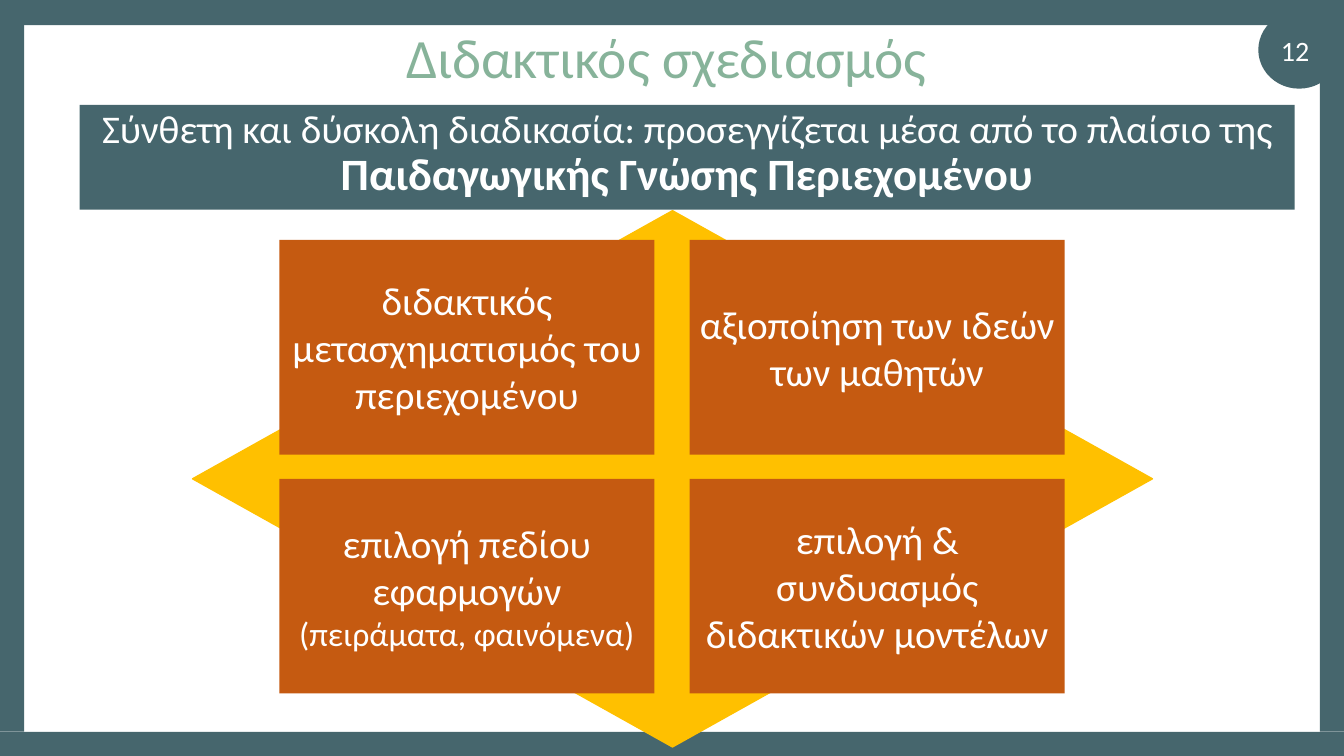
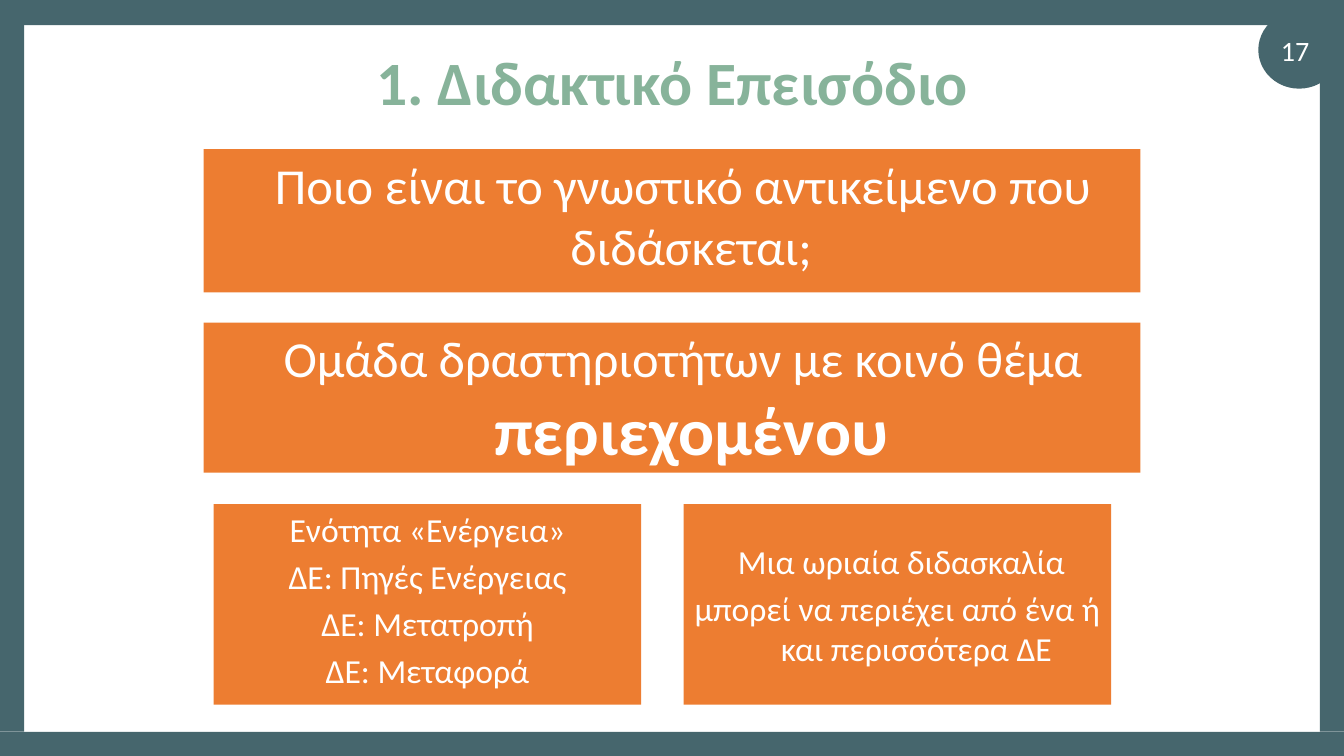
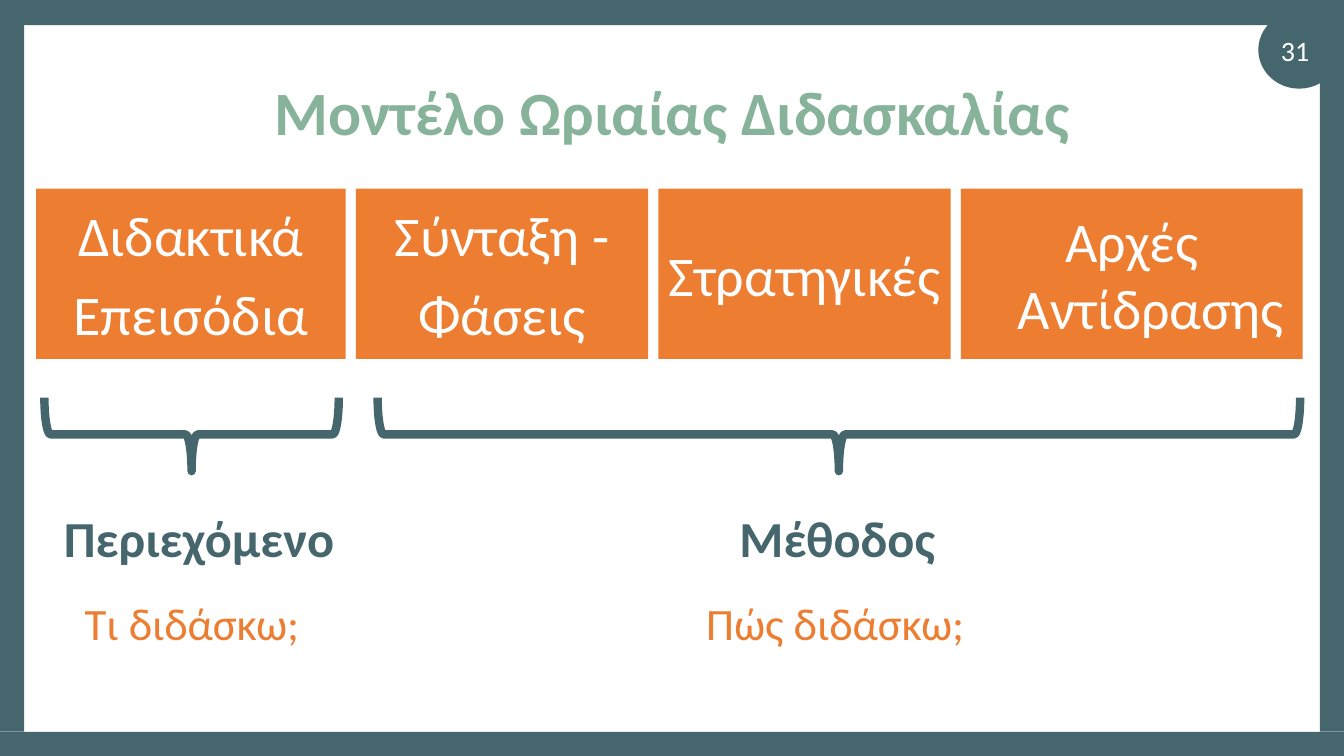
from dataclasses import dataclass
from itertools import product

from pptx import Presentation
from pptx.dml.color import RGBColor
from pptx.enum.shapes import MSO_SHAPE as Shape
from pptx.enum.text import MSO_ANCHOR as Anchor, PP_ALIGN as Align
from pptx.util import Inches, Pt

TEAL = RGBColor(0x46, 0x66, 0x6D)
SAGE = RGBColor(0x87, 0xB3, 0x9A)
WHITE = RGBColor(0xFF, 0xFF, 0xFF)
GOLD = RGBColor(0xFF, 0xC0, 0x00)
RUST = RGBColor(0xC5, 0x5A, 0x11)
ORANGE = RGBColor(0xED, 0x7D, 0x31)

FONT = "Calibri"
WIDTH, HEIGHT = 13.33, 7.5
HANG = 0.38  # hanging indent of the content paragraphs


@dataclass(frozen=True)
class Run:
    text: str
    size: float
    bold: bool = False
    color: RGBColor = WHITE


@dataclass(frozen=True)
class Para:
    runs: tuple[Run, ...]
    left: float = 0
    first: float = 0
    line: float = 1.0


@dataclass(frozen=True)
class Box:
    left: float
    top: float
    width: float
    height: float


def plain(text: str, size: float) -> Para:
    return Para((Run(text, size),))


def hanging(*runs: Run, first: float = -HANG) -> Para:
    return Para(runs, left=HANG, first=first)


def write(sp, paras: list[Para], anchor=Anchor.MIDDLE) -> None:
    tf = sp.text_frame
    frame = {"word_wrap": True, "vertical_anchor": anchor,
             "margin_left": Inches(0.08), "margin_right": Inches(0.08)}
    for name, value in frame.items():
        setattr(tf, name, value)
    for i, para in enumerate(paras):
        p = tf.add_paragraph() if i else tf.paragraphs[0]
        p.alignment, p.line_spacing = Align.CENTER, para.line
        if para.left:
            # Space before is a fifth of the text size
            p.space_before = Pt(0.2 * para.runs[0].size if i else 0)
            pPr = p._p.get_or_add_pPr()
            pPr.set("marL", str(Inches(para.left)))
            pPr.set("indent", str(Inches(para.first)))
        for run in para.runs:
            r = p.add_run()
            r.text = run.text
            style = {"name": FONT, "size": Pt(run.size), "bold": run.bold}
            for name, value in style.items():
                setattr(r.font, name, value)
            r.font.color.rgb = run.color


def place(box: Box) -> tuple:
    return tuple(Inches(v) for v in (box.left, box.top, box.width, box.height))


def add_block(s, box: Box, fill: RGBColor, kind=Shape.RECTANGLE):
    sp = s.shapes.add_shape(kind, *place(box))
    sp.shadow.inherit = False
    sp.fill.solid()
    sp.fill.fore_color.rgb = fill
    sp.line.fill.background()
    return sp


def add_text(s, box: Box, *paras: Para) -> None:
    write(s.shapes.add_textbox(*place(box)), list(paras))


def add_panel(s, box: Box, fill: RGBColor, *paras: Para, anchor=Anchor.MIDDLE) -> None:
    write(add_block(s, box, fill), list(paras), anchor)


def add_brace(s, center: float, span: float) -> None:
    depth, middle = 0.73, 4.31
    box = Box(center - depth / 2, middle - span / 2, depth, span)
    sp = s.shapes.add_shape(Shape.RIGHT_BRACE, *place(box))
    sp.shadow.inherit = False
    sp.rotation = 90
    sp.fill.background()
    sp.line.color.rgb, sp.line.width = TEAL, Pt(6)


def new_slide(prs, number: int, title: Run, title_box: Box):
    """Blank slide with the frame, the number badge and the title."""
    s = prs.slides.add_slide(prs.slide_layouts[6])
    add_block(s, Box(12.48, 0.11, 0.81, 0.77), TEAL, Shape.OVAL)
    for band in (Box(0, 0, WIDTH, 0.25), Box(0, 7.26, WIDTH, 0.24),
                 Box(0, 0, 0.24, 7.26), Box(13.09, 0, 0.24, 7.26)):
        add_block(s, band, TEAL)
    add_text(s, title_box, Para((title,), line=0.9))
    add_text(s, Box(12.44, 0.3, 0.81, 0.4), plain(str(number), 20))
    return s


def design_slide(prs) -> None:
    s = new_slide(prs, 12, Run("Διδακτικός σχεδιασμός", 39.6, color=SAGE),
                  Box(0.86, 0.28, 11.5, 0.64))
    # Diamond behind a two by two grid
    diamond = add_block(s, Box(1.91, 2.09, 9.52, 5.32), GOLD, Shape.DIAMOND)
    diamond.line.color.rgb, diamond.line.width = GOLD, Pt(1)
    cells = (
        [plain("διδακτικός μετασχηματισμός του περιεχομένου", 28)],
        [plain("αξιοποίηση των ιδεών των μαθητών", 28)],
        [plain("επιλογή πεδίου εφαρμογών", 28), plain("(πειράματα, φαινόμενα)", 24)],
        [plain("επιλογή & συνδυασμός διδακτικών μοντέλων", 28)],
    )
    for (row, col), paras in zip(product(range(2), repeat=2), cells):
        add_panel(s, Box(2.77 + 4.07 * col, 2.38 + 2.37 * row, 3.72, 2.13), RUST, *paras)
    # Statement under the title
    add_panel(s, Box(0.79, 1.04, 12.05, 1.04), TEAL, Para((
        Run("Σύνθετη και δύσκολη διαδικασία: προσεγγίζεται μέσα από το πλαίσιο της ", 28),
        Run("Παιδαγωγικής Γνώσης Περιεχομένου", 32, True)), line=0.9), anchor=Anchor.TOP)


def episode_slide(prs) -> None:
    s = new_slide(prs, 17, Run("1. Διδακτικό Επεισόδιο", 44, True, SAGE),
                  Box(0.92, 0.4, 11.5, 0.89))
    # Wide panels
    add_panel(s, Box(2.02, 1.48, 9.29, 1.42), ORANGE,
              hanging(Run("Ποιο είναι το γνωστικό αντικείμενο που διδάσκεται;", 36), first=-0.16),
              anchor=Anchor.TOP)
    add_panel(s, Box(2.02, 3.2, 9.29, 1.49), ORANGE,
              hanging(Run("Ομάδα δραστηριοτήτων με κοινό θέμα ", 36),
                      Run("περιεχομένου", 48, True), first=-0.16),
              anchor=Anchor.TOP)
    # Example and remark
    example = ("Ενότητα «Ενέργεια»", "ΔΕ: Πηγές Ενέργειας", "ΔΕ: Μετατροπή", "ΔΕ: Μεταφορά")
    add_panel(s, Box(2.12, 5, 4.24, 1.99), ORANGE,
              *(hanging(Run(text, 24)) for text in example), anchor=Anchor.TOP)
    add_panel(s, Box(6.78, 5, 4.24, 1.99), ORANGE,
              hanging(Run("Μια ωριαία διδασκαλία", 24), first=-0.3),
              hanging(Run("μπορεί να περιέχει από ένα ή και περισσότερα ΔΕ", 24)))


def model_slide(prs) -> None:
    s = new_slide(prs, 31, Run("Μοντέλο Ωριαίας Διδασκαλίας", 44, True, SAGE),
                  Box(0.92, 0.7, 11.5, 0.89))
    # Row of components
    components = ((3.07, ("Διδακτικά", "Επεισόδια")), (2.9, ("Σύνταξη -", "Φάσεις")),
                  (2.9, ("Στρατηγικές",)), (3.39, ("Αρχές Αντίδρασης",)))
    left, gap = 0.36, 0.1
    for width, lines in components:
        add_panel(s, Box(left, 1.87, width, 1.69), ORANGE,
                  *(hanging(Run(line, 40)) for line in lines))
        left += width + gap
    # Braces
    add_brace(s, 1.9, 2.92)
    add_brace(s, 8.32, 9.15)
    # Captions and questions
    labels = (
        (0.44, 4.91, Run("Περιεχόμενο", 36, True, TEAL)),
        (6.77, 4.91, Run("Μέθοδος", 36, True, TEAL)),
        (0.37, 5.76, Run("Τι διδάσκω;", 32, color=ORANGE)),
        (6.75, 5.76, Run("Πώς διδάσκω;", 32, color=ORANGE)),
    )
    for x, y, run in labels:
        add_text(s, Box(x, y, 3.07, 0.84), hanging(run))


def main() -> None:
    prs = Presentation()
    prs.slide_width, prs.slide_height = Inches(WIDTH), Inches(HEIGHT)
    for build in (design_slide, episode_slide, model_slide):
        build(prs)
    prs.save("out.pptx")


if __name__ == "__main__":
    main()
